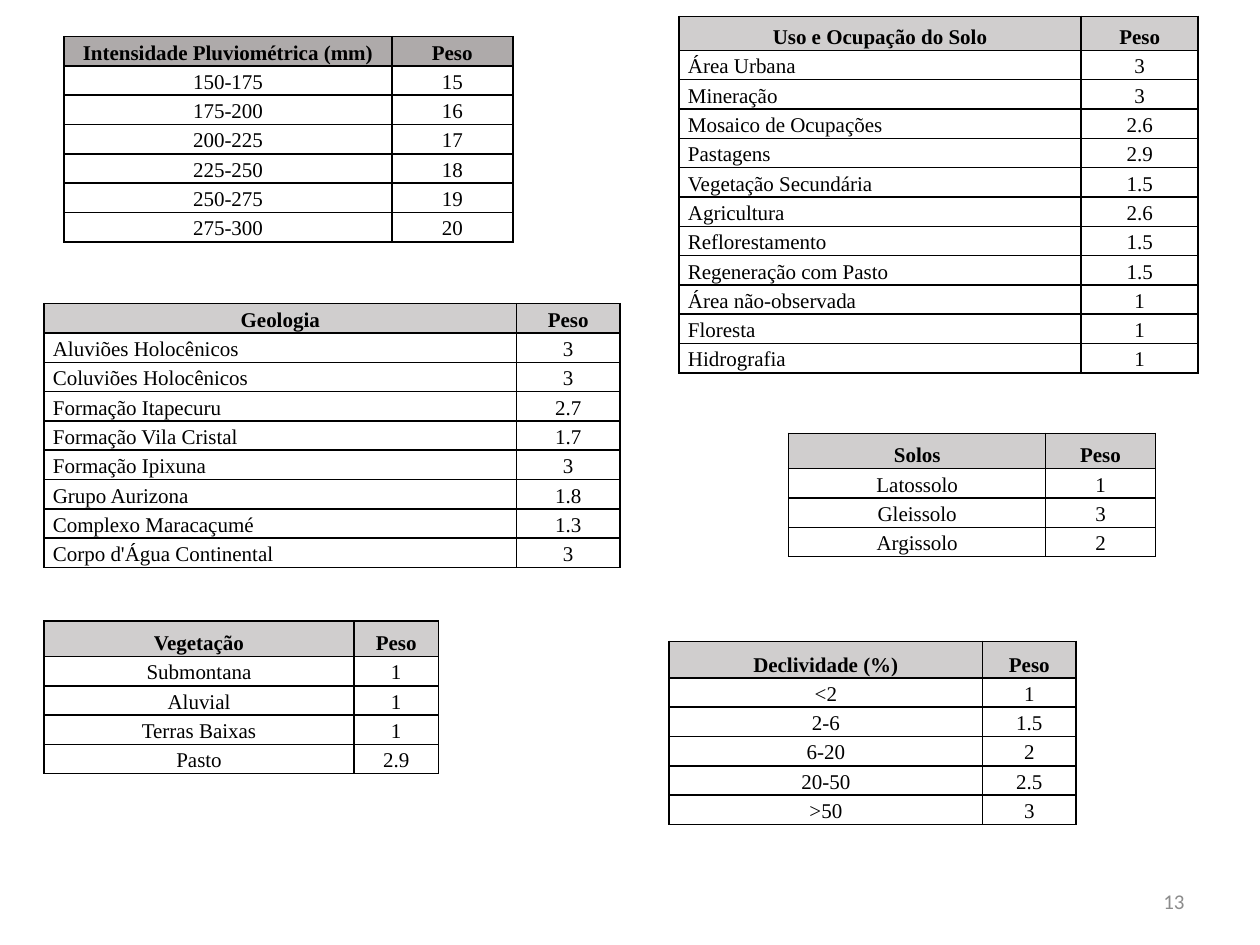
from lxml.etree import SubElement
from pptx import Presentation
from pptx.dml.color import RGBColor
from pptx.enum.text import MSO_ANCHOR as ANCHOR, PP_ALIGN as ALIGN
from pptx.oxml.ns import qn
from pptx.util import Inches, Pt

COLORS = {"text": "000000", "border": "000000", "dark": "AEAAAA",
          "light": "D0CECE", "number": "8C8C8C"}
BODY_ROW = 0.22
CELL_FORMAT = {"margin_left": Inches(0.07), "margin_right": Inches(0.07),
               "margin_top": Inches(0.01), "margin_bottom": Inches(0.01),
               "vertical_anchor": ANCHOR.BOTTOM}

# box (left, top, width, height), column widths, header height, header fill, label alignment, rows
TABLES = [
    ((0.51, 0.29, 3.56, 1.76), (2.6, 0.96), 0.23, "dark", ALIGN.CENTER, [
        ("Intensidade Pluviométrica (mm)", "Peso"),
        ("150-175", "15"), ("175-200", "16"), ("200-225", "17"),
        ("225-250", "18"), ("250-275", "19"), ("275-300", "20")]),
    ((0.35, 4.93, 3.12, 1.28), (2.46, 0.67), 0.28, "light", ALIGN.CENTER, [
        ("Vegetação", "Peso"),
        ("Submontana", "1"), ("Aluvial", "1"), ("Terras Baixas", "1"), ("Pasto", "2.9")]),
    ((5.31, 5.09, 3.22, 1.54), (2.49, 0.74), 0.29, "light", ALIGN.CENTER, [
        ("Declividade (%)", "Peso"),
        ("<2", "1"), ("2-6", "1.5"), ("6-20", "2"), ("20-50", "2.5"), (">50", "3")]),
    ((0.35, 2.41, 4.57, 2.26), (3.75, 0.82), 0.23, "light", ALIGN.LEFT, [
        ("Geologia", "Peso"),
        ("Aluviões Holocênicos", "3"), ("Coluviões Holocênicos", "3"),
        ("Formação Itapecuru", "2.7"), ("Formação Vila Cristal", "1.7"),
        ("Formação Ipixuna", "3"), ("Grupo Aurizona", "1.8"),
        ("Complexo Maracaçumé", "1.3"), ("Corpo d'Água Continental", "3")]),
    ((6.26, 3.44, 2.9, 1.03), (2.04, 0.87), 0.28, "light", ALIGN.CENTER, [
        ("Solos", "Peso"),
        ("Latossolo", "1"), ("Gleissolo", "3"), ("Argissolo", "2")]),
    ((5.39, 0.13, 4.12, 3.03), (3.19, 0.93), 0.27, "light", ALIGN.LEFT, [
        ("Uso e Ocupação do Solo", "Peso"),
        ("Área Urbana", "3"), ("Mineração", "3"), ("Mosaico de Ocupações", "2.6"),
        ("Pastagens", "2.9"), ("Vegetação Secundária", "1.5"), ("Agricultura", "2.6"),
        ("Reflorestamento", "1.5"), ("Regeneração com Pasto", "1.5"),
        ("Área não-observada", "1"), ("Floresta", "1"), ("Hidrografia", "1")]),
]


def add_text(p, text, font, color, align, bold=False):
    p.alignment = align
    r = p.add_run()
    r.text = text
    for name, value in {"name": font, "size": Pt(12), "bold": bold}.items():
        setattr(r.font, name, value)
    r.font.color.rgb = RGBColor.from_string(COLORS[color])


def add_borders(cell):
    tc_pr = cell._tc.get_or_add_tcPr()
    for side in ("lnL", "lnR", "lnT", "lnB"):
        ln = SubElement(tc_pr, qn(f"a:{side}"), w=str(Pt(1)))
        fill = SubElement(ln, qn("a:solidFill"))
        SubElement(fill, qn("a:srgbClr"), val=COLORS["border"])


prs = Presentation()
prs.slide_width, prs.slide_height = Inches(10), Inches(7.5)
s = prs.slides.add_slide(prs.slide_layouts[6])

for box, widths, header_height, header_fill, label_align, rows in TABLES:
    frame = s.shapes.add_table(len(rows), len(widths), *map(Inches, box))
    table = frame.table
    table.horz_banding = False
    for column, width in zip(table.columns, widths):
        column.width = Inches(width)
    for i, values in enumerate(rows):
        header = i == 0
        table.rows[i].height = Inches(header_height if header else BODY_ROW)
        for j, value in enumerate(values):
            cell = table.cell(i, j)
            for name, setting in CELL_FORMAT.items():
                setattr(cell, name, setting)
            add_borders(cell)
            if header:
                cell.fill.solid()
                cell.fill.fore_color.rgb = RGBColor.from_string(COLORS[header_fill])
            else:
                cell.fill.background()
            p = cell.text_frame.paragraphs[0]
            p.line_spacing = 1.15
            align = ALIGN.CENTER if header or j == 1 else label_align
            add_text(p, value, "Times New Roman", "text", align, header)
    frame.height = Inches(box[3])

tf = s.shapes.add_textbox(Inches(7.17), Inches(6.95), Inches(2.33), Inches(0.4)).text_frame
tf.word_wrap = True
tf.vertical_anchor = ANCHOR.MIDDLE
add_text(tf.paragraphs[0], "13", "Calibri", "number", ALIGN.RIGHT)

prs.save("out.pptx")
